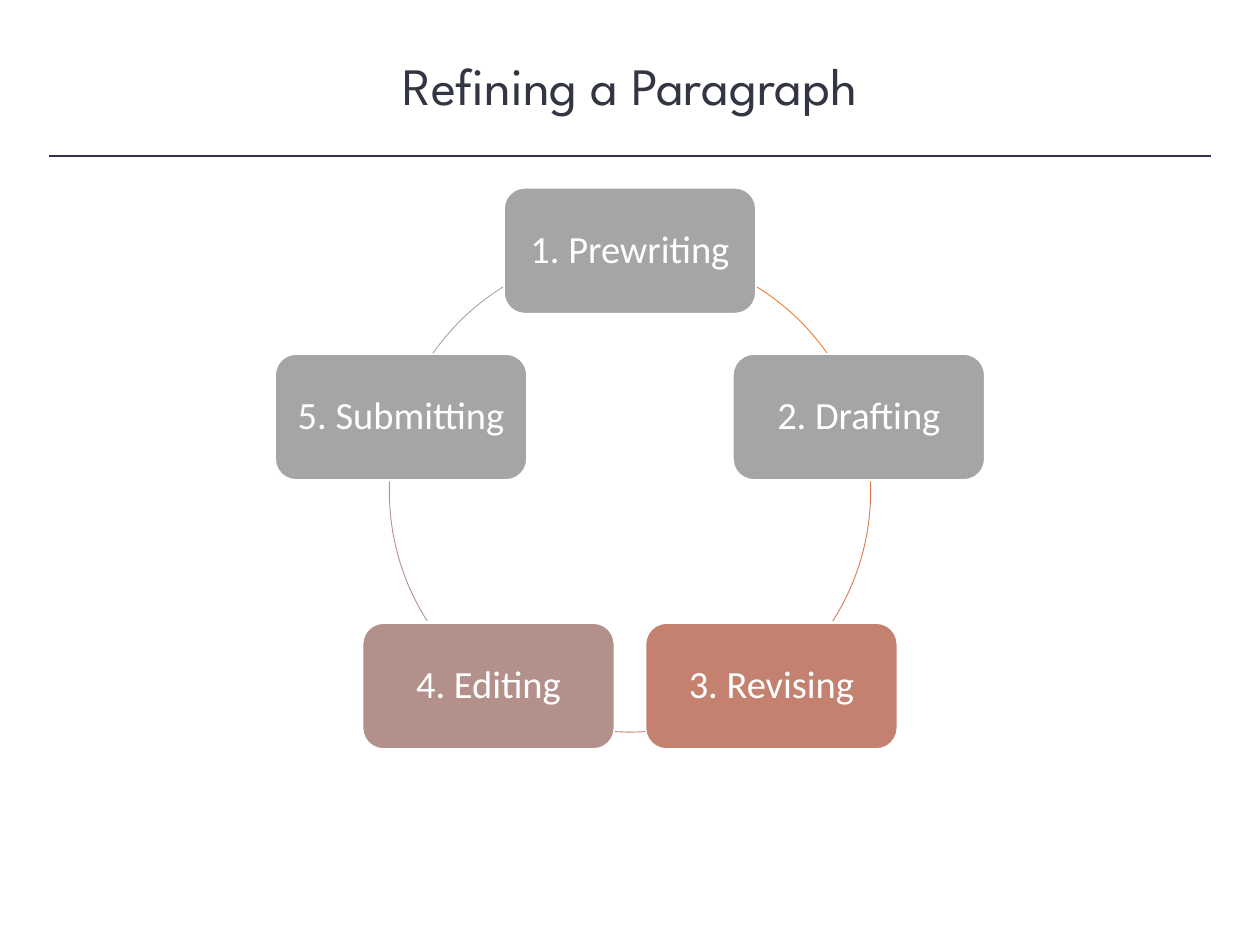
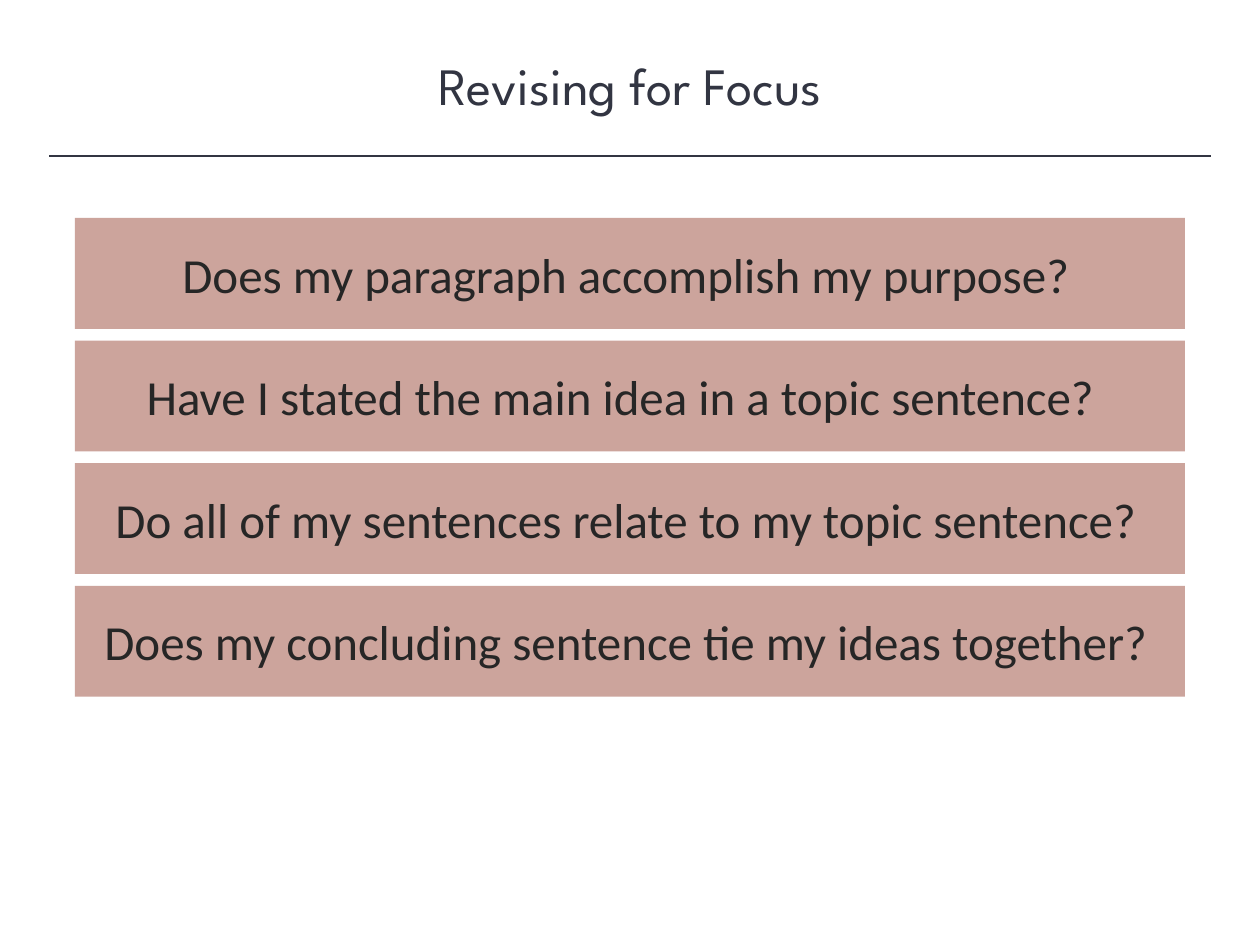
from dataclasses import dataclass
from math import cos, radians, sin

from lxml.etree import SubElement
from pptx import Presentation
from pptx.dml.color import RGBColor
from pptx.enum.shapes import MSO_CONNECTOR, MSO_SHAPE
from pptx.enum.text import MSO_ANCHOR, MSO_AUTO_SIZE, PP_ALIGN
from pptx.oxml.ns import qn
from pptx.util import Inches, Pt

COLUMNS, ROWS = 100, 75
TITLE_ONLY = 5


@dataclass(frozen=True)
class Theme:
    ink: str = "323542"
    dark_text: str = "262626"
    white: str = "FFFFFF"
    grey: str = "A5A5A5"
    clay: str = "C48170"
    mauve: str = "B4908B"
    orange: str = "ED7D31"
    burnt_orange: str = "D87A51"
    rose: str = "CCA49C"
    title_font: str = "League Spartan"
    body_font: str = "Calibri"
    title_size: int = 30
    step_size: int = 22
    question_size: int = 28


THEME = Theme()


def write_text(shape, text, *, font, size, color, anchor=MSO_ANCHOR.MIDDLE,
               insets=(1, 0.5, 1, 0.5), line_spacing=1.0):
    """Fill a shape with one centred paragraph; insets are tenths of an inch."""
    frame = shape.text_frame
    frame.word_wrap = True
    frame.auto_size = MSO_AUTO_SIZE.NONE
    frame.vertical_anchor = anchor
    (frame.margin_left, frame.margin_top,
     frame.margin_right, frame.margin_bottom) = [Inches(inset / 10) for inset in insets]
    paragraph = frame.paragraphs[0]
    paragraph.alignment = PP_ALIGN.CENTER
    paragraph.line_spacing = line_spacing
    run = paragraph.add_run()
    run.text = text
    run.font.name = font
    run.font.size = Pt(size)
    run.font.color.rgb = RGBColor.from_string(color)


class Deck:
    """Holds the theme and the current slide; lengths are grid columns and rows."""

    def __init__(self, theme):
        self.theme = theme
        self.presentation = Presentation()
        self.presentation.slide_width = Inches(10)
        self.presentation.slide_height = Inches(7.5)
        self.slide = None

    def place(self, column, row):
        return (round(self.presentation.slide_width * column / COLUMNS),
                round(self.presentation.slide_height * row / ROWS))

    def set_line(self, line, color, width):
        line.color.rgb = RGBColor.from_string(color)
        line.width = Pt(width)

    def add_slide(self, title):
        """Start a slide with its title and the rule under it."""
        layout = self.presentation.slide_layouts[TITLE_ONLY]
        self.slide = self.presentation.slides.add_slide(layout)
        placeholder = self.slide.shapes.title
        placeholder.left, placeholder.top = self.place(0, 3.7)
        placeholder.width, placeholder.height = self.place(COLUMNS, 6.1)
        write_text(placeholder, title, font=self.theme.title_font,
                   size=self.theme.title_size, color=self.theme.ink,
                   anchor=MSO_ANCHOR.TOP)
        self.rule(3.9, COLUMNS - 3.9, 12.4)

    def rule(self, start, end, row):
        connector = self.slide.shapes.add_connector(
            MSO_CONNECTOR.STRAIGHT, *self.place(start, row), *self.place(end, row))
        self.set_line(connector.line, self.theme.ink, 1)
        SubElement(connector.element.spPr, qn("a:effectLst"))

    def box(self, kind, left, top, width, height, fill, outline=None):
        shape = self.slide.shapes.add_shape(
            kind, *self.place(left, top), *self.place(width, height))
        shape.shadow.inherit = False
        shape.fill.solid()
        shape.fill.fore_color.rgb = RGBColor.from_string(fill)
        if outline:
            self.set_line(shape.line, outline, 1)
        else:
            shape.line.fill.background()
        return shape

    def arc(self, center, radius, start, end, color):
        """Draw a clockwise arc; angles are degrees from the right."""
        column, row = center
        shape = self.slide.shapes.add_shape(
            MSO_SHAPE.ARC, *self.place(column - radius, row - radius),
            *self.place(2 * radius, 2 * radius))
        shape.shadow.inherit = False
        shape.fill.background()
        self.set_line(shape.line, color, 0.5)
        # Arc adjustments count 60000ths of a degree, scaled by 100000.
        for index, angle in enumerate((start, end)):
            shape.adjustments[index] = angle * 0.6


def build_cycle(deck):
    theme = deck.theme
    deck.add_slide("Refining a Paragraph")
    center, radius = (50, 39), 19.1
    width, height = 20, 10
    # label, box fill, start and end of the arc to the next step, arc colour
    steps = [
        ("1. Prewriting", theme.grey, 301.8, 325, theme.orange),
        ("2. Drafting", theme.grey, 357.6, 32.6, theme.burnt_orange),
        ("3. Revising", theme.clay, 86.4, 93.6, theme.clay),
        ("4. Editing", theme.mauve, 147.4, 182.4, theme.mauve),
        ("5. Submitting", theme.grey, 215, 238.2, theme.grey),
    ]
    for index, (label, fill, start, end, arc_color) in enumerate(steps):
        angle = radians(360 / len(steps) * index - 90)
        step = deck.box(MSO_SHAPE.ROUNDED_RECTANGLE,
                        center[0] + radius * cos(angle) - width / 2,
                        center[1] + radius * sin(angle) - height / 2,
                        width, height, fill, theme.white)
        write_text(step, label, font=theme.body_font, size=theme.step_size,
                   color=theme.white, insets=(0.9,) * 4, line_spacing=0.9)
        deck.arc(center, radius, start, end, arc_color)


def build_questions(deck):
    theme = deck.theme
    deck.add_slide("Revising for Focus")
    first_top, pitch = 17.3, 9.73
    questions = [
        "Does my paragraph accomplish my purpose?",
        "Have I stated the main idea in a topic sentence? ",
        "Do all of my sentences relate to my topic sentence?",
        "Does my concluding sentence tie my ideas together?",
    ]
    for index, question in enumerate(questions):
        bar = deck.box(MSO_SHAPE.RECTANGLE, 5.95, first_top + pitch * index,
                       88.1, 8.8, theme.rose)
        write_text(bar, question, font=theme.body_font, size=theme.question_size,
                   color=theme.dark_text, insets=(2, 0.5, 2.7, 0.5))


def main():
    deck = Deck(THEME)
    build_cycle(deck)
    build_questions(deck)
    deck.presentation.save("out.pptx")


if __name__ == "__main__":
    main()
